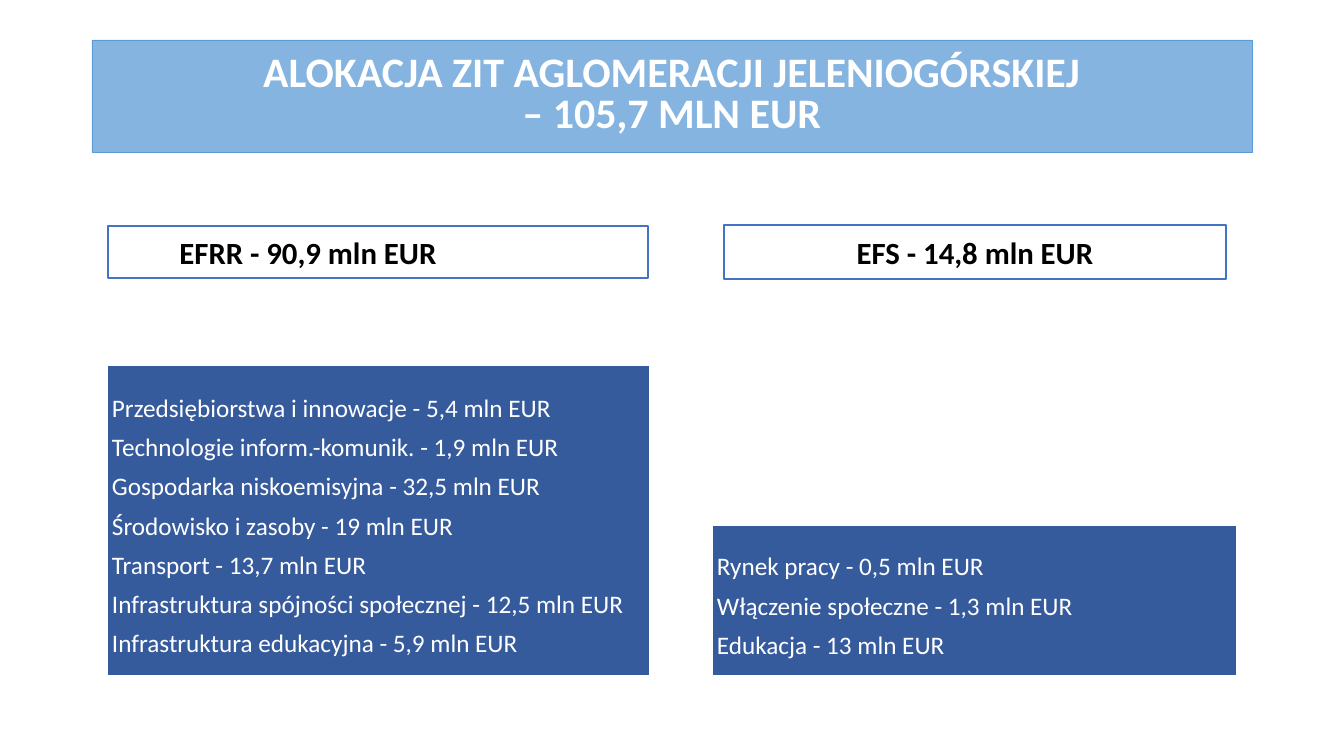
from dataclasses import dataclass

from pptx import Presentation
from pptx import util as u
from pptx.dml.color import RGBColor
from pptx.enum import shapes, text

PX = 914400 / 100.8


@dataclass(frozen=True)
class Theme:
    font: str = "Calibri"
    white: str = "FFFFFF"
    black: str = "000000"
    banner: str = "84B4DF"
    banner_line: str = "5B9BD5"
    panel: str = "365B9D"
    outline: str = "4472C4"
    title_size: int = 30
    fund_size: int = 22
    item_size: int = 18


T = Theme()


def px(n):
    return u.Emu(round(n * PX))


def text_box(s, box, lines, fill, line, line_pt, size, color, bold=False,
             align=text.PP_ALIGN.CENTER, spacing=1.0, right_inset=5):
    """Add a filled rectangle with one paragraph per line of text."""
    sp = s.shapes.add_shape(shapes.MSO_SHAPE.RECTANGLE, *map(px, box))
    sp.shadow.inherit = False
    sp.fill.solid()
    sp.fill.fore_color.rgb = RGBColor.from_string(fill)
    sp.line.color.rgb = RGBColor.from_string(line)
    sp.line.width = u.Pt(line_pt)
    tf = sp.text_frame
    tf.word_wrap = True
    tf.vertical_anchor = text.MSO_ANCHOR.MIDDLE
    tf.margin_left = tf.margin_top = tf.margin_bottom = px(5)
    tf.margin_right = px(right_inset)
    for i, words in enumerate(lines):
        p = tf.add_paragraph() if i else tf.paragraphs[0]
        p.alignment = align
        p.line_spacing = spacing
        r = p.add_run()
        r.text = words
        r.font.name = T.font
        r.font.size = u.Pt(size)
        r.font.bold = bold
        r.font.color.rgb = RGBColor.from_string(color)


def title_banner(s, box, lines):
    text_box(s, box, lines, T.banner, T.banner_line, 0.5,
             T.title_size, T.white, bold=True, spacing=0.8)


def fund_header(s, box, label, right_inset=5):
    text_box(s, box, [label], T.white, T.outline, 1,
             T.fund_size, T.black, bold=True, right_inset=right_inset)


def allocation_list(s, box, items):
    lines = [f"{area} - {amount} mln EUR" for area, amount in items]
    text_box(s, box, lines, T.panel, T.white, 1.5, T.item_size, T.white,
             align=text.PP_ALIGN.LEFT, spacing=1.3)


def fund_column(s, box, label, items, header, list_height, right_inset=5):
    """Place a header at the top of the box and its list at the bottom.

    header is the header's left offset, top offset, width and height.
    """
    x, y, w, h = box
    dx, dy, header_w, header_h = header
    allocation_list(s, (x, y + h - list_height, w, list_height), items)
    fund_header(s, (x + dx, y + dy, header_w, header_h), label, right_inset)


def main():
    prs = Presentation()
    prs.slide_width, prs.slide_height = px(1344), px(756)
    s = prs.slides.add_slide(prs.slide_layouts[6])
    title_banner(s, (92, 40, 1160, 112),
                 ["ALOKACJA ZIT AGLOMERACJI JELENIOGÓRSKIEJ",
                  "– 105,7 MLN EUR"])
    fund_column(s, (107, 225, 543, 451), "EFRR - 90,9 mln EUR", [
        ("Przedsiębiorstwa i innowacje", "5,4"),
        ("Technologie inform.-komunik.", "1,9"),
        ("Gospodarka niskoemisyjna", "32,5"),
        ("Środowisko i zasoby", "19"),
        ("Transport", "13,7"),
        ("Infrastruktura spójności społecznej", "12,5"),
        ("Infrastruktura edukacyjna", "5,9"),
    ], header=(1, 1, 540, 52), list_height=311, right_inset=145)
    fund_column(s, (712, 225, 525, 451), "EFS - 14,8 mln EUR", [
        ("Rynek pracy", "0,5"),
        ("Włączenie społeczne", "1,3"),
        ("Edukacja", "13"),
    ], header=(12, 0, 502, 54), list_height=151)
    prs.save("out.pptx")


if __name__ == "__main__":
    main()
